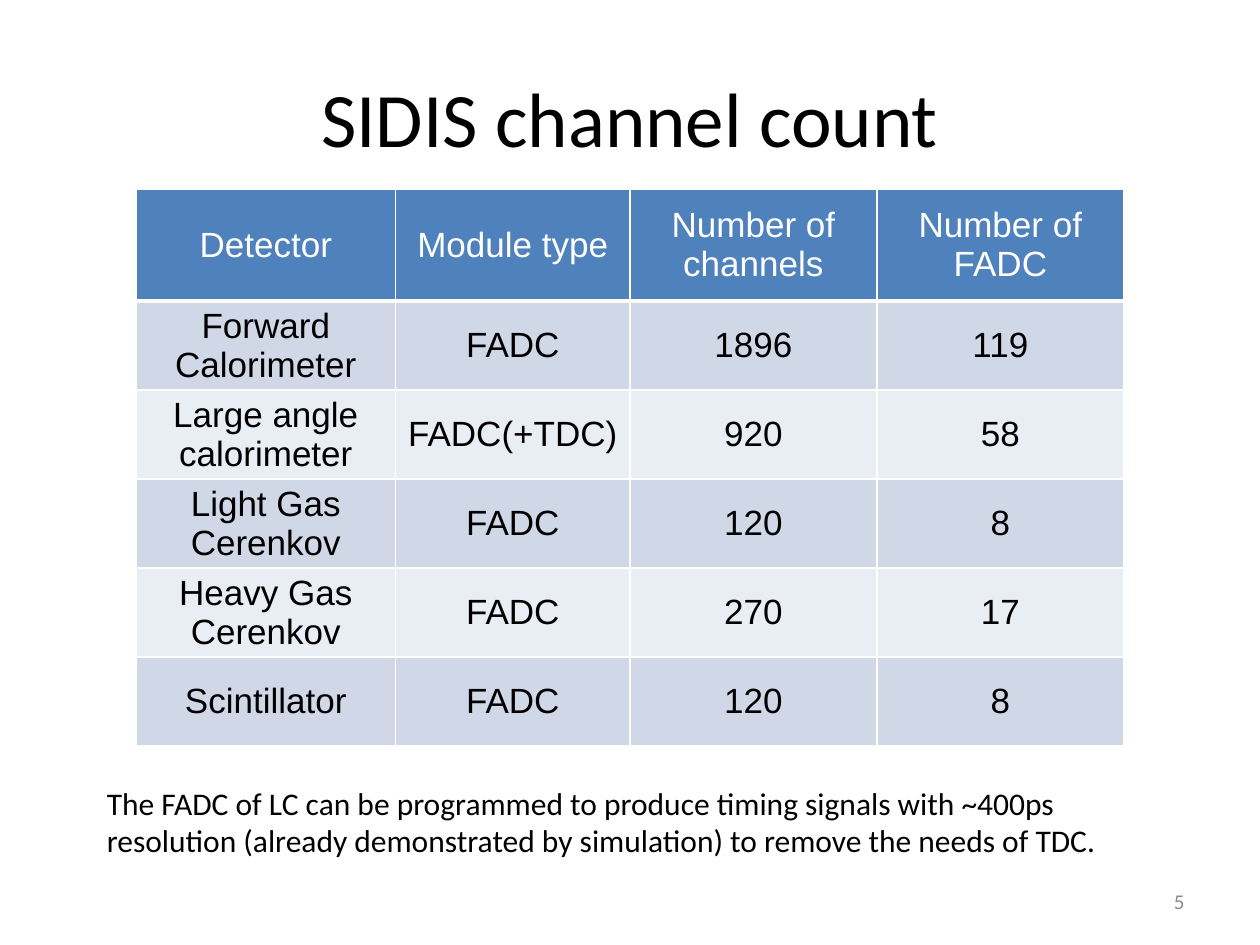
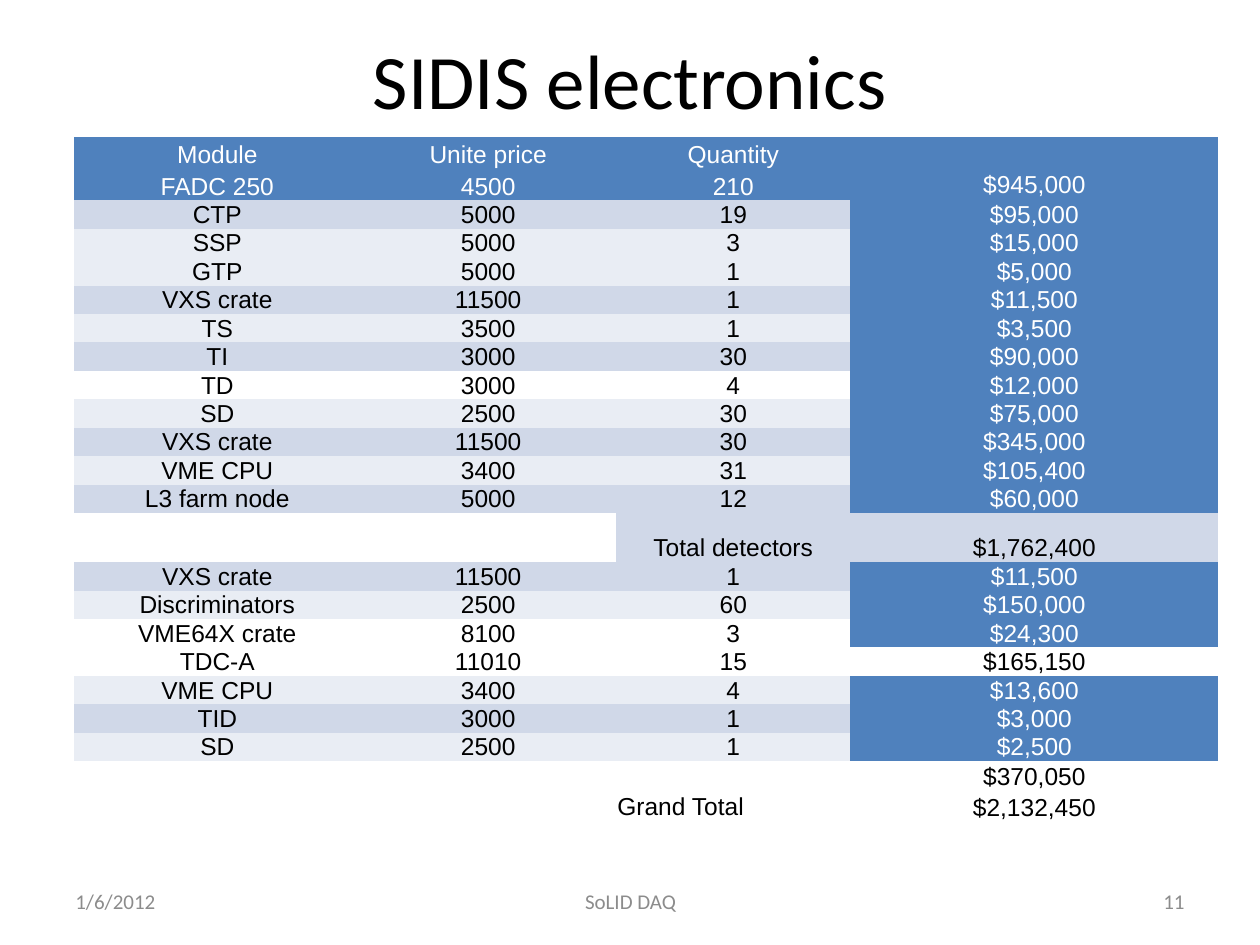
from dataclasses import dataclass

from lxml import etree
from pptx import Presentation
from pptx.dml.color import RGBColor
from pptx.enum.text import MSO_ANCHOR, PP_ALIGN
from pptx.oxml.ns import qn
from pptx.util import Inches, Pt

LEFT, CENTER, RIGHT = PP_ALIGN.LEFT, PP_ALIGN.CENTER, PP_ALIGN.RIGHT
MIDDLE, BOTTOM = MSO_ANCHOR.MIDDLE, MSO_ANCHOR.BOTTOM
TITLE_ONLY = 5
PLAIN_TABLE_STYLE = "{2D5ABB26-0587-4C30-8999-92F81FD0307C}"


@dataclass(frozen=True)
class Theme:
    black: str = "000000"
    white: str = "FFFFFF"
    gray: str = "8C8C8C"
    blue: str = "4F81BD"
    dark_band: str = "D0D8E8"
    light_band: str = "E9EDF4"
    text_font: str = "Calibri"
    table_font: str = "Arial"
    title_size: int = 44
    count_size: int = 20
    note_size: int = 18
    cost_size: int = 14
    cost_line: float = 16.2
    footer_size: int = 12


THEME = Theme()
DARK, LIGHT, CLEAR = THEME.dark_band, THEME.light_band, None

COUNT_HEADER = ("Detector", "Module type", "Number of channels", "Number of FADC")
DETECTORS = [
    ("Forward Calorimeter", "FADC", 1896, 119),
    ("Large angle calorimeter", "FADC(+TDC)", 920, 58),
    ("Light Gas Cerenkov", "FADC", 120, 8),
    ("Heavy Gas Cerenkov", "FADC", 270, 17),
    ("Scintillator", "FADC", 120, 8),
]
TIMING_NOTE = (
    "The FADC of LC can be programmed to produce timing signals with ~400ps "
    "resolution (already demonstrated by simulation) to remove the needs of TDC."
)

COST_HEADER = ("Module", "Unite price", "Quantity", "")
DETECTOR_MODULES = [
    ("FADC 250", 4500, 210, THEME.blue),
    ("CTP", 5000, 19, DARK),
    ("SSP", 5000, 3, LIGHT),
    ("GTP", 5000, 1, LIGHT),
    ("VXS crate", 11500, 1, DARK),
    ("TS", 3500, 1, LIGHT),
    ("TI", 3000, 30, DARK),
    ("TD", 3000, 4, CLEAR),
    ("SD", 2500, 30, LIGHT),
    ("VXS crate", 11500, 30, DARK),
    ("VME CPU", 3400, 31, LIGHT),
    ("L3 farm node", 5000, 12, DARK),
]
TIMING_MODULES = [
    ("VXS crate", 11500, 1, DARK),
    ("Discriminators", 2500, 60, LIGHT),
    ("VME64X crate", 8100, 3, CLEAR),
    ("TDC-A", 11010, 15, CLEAR),
    ("VME CPU", 3400, 4, LIGHT),
    ("TID", 3000, 1, DARK),
    ("SD", 2500, 1, LIGHT),
]
UNSHADED_COST = "TDC-A"


def format_text(paragraph, size, color, font=THEME.text_font, align=LEFT):
    paragraph.alignment = align
    paragraph.font.name = font
    paragraph.font.size = Pt(size)
    paragraph.font.bold = False
    paragraph.font.color.rgb = RGBColor.from_string(color)


def add_titled_slide(deck, title, top):
    slide = deck.slides.add_slide(deck.slide_layouts[TITLE_ONLY])
    heading = slide.shapes.title
    heading.left, heading.top = Inches(0.5), Inches(top)
    heading.width, heading.height = Inches(9), Inches(1.25)
    heading.text_frame.text = title
    heading.text_frame.vertical_anchor = MIDDLE
    format_text(heading.text_frame.paragraphs[0], THEME.title_size, THEME.black, align=CENTER)
    return slide


def add_text(slide, box, text, size, color, align=LEFT, anchor=None):
    frame = slide.shapes.add_textbox(*map(Inches, box)).text_frame
    frame.word_wrap = True
    frame.vertical_anchor = anchor
    frame.text = text
    format_text(frame.paragraphs[0], size, color, align=align)


def add_footer(slide, number, date="", topic=""):
    parts = [
        (0.5, 2.33, date, LEFT),
        (3.42, 3.17, topic, CENTER),
        (7.17, 2.33, number, RIGHT),
    ]
    for left, width, text, align in parts:
        if text:
            add_text(slide, (left, 6.95, width, 0.4), text,
                     THEME.footer_size, THEME.gray, align, MIDDLE)


def add_plain_table(slide, left, top, widths, heights):
    box = map(Inches, (left, top, sum(widths), sum(heights)))
    table = slide.shapes.add_table(len(heights), len(widths), *box).table
    table.first_row = table.horz_banding = False
    table._tbl.tblPr.find(qn("a:tableStyleId")).text = PLAIN_TABLE_STYLE
    for column, width in zip(table.columns, widths):
        column.width = Inches(width)
    for row, height in zip(table.rows, heights):
        row.height = Inches(height)
    return table


def fill_cell(cell, text, size, fill, anchor, align=CENTER):
    cell.margin_left = cell.margin_right = Inches(0.01)
    cell.margin_top = cell.margin_bottom = 0
    cell.vertical_anchor = anchor
    if fill:
        cell.fill.solid()
        cell.fill.fore_color.rgb = RGBColor.from_string(fill)
    else:
        cell.fill.background()
    cell.text = str(text)
    color = THEME.white if fill == THEME.blue else THEME.black
    format_text(cell.text_frame.paragraphs[0], size, color, THEME.table_font, align)


def add_borders(cell, widths):
    properties = cell._tc.get_or_add_tcPr()
    for index, (side, width) in enumerate(widths.items()):
        line = etree.Element(qn(f"a:{side}"), w=str(Pt(width)))
        solid = etree.SubElement(line, qn("a:solidFill"))
        etree.SubElement(solid, qn("a:srgbClr"), val=THEME.white)
        properties.insert(index, line)


def add_count_table(slide, left, top, height):
    rows = [COUNT_HEADER, *DETECTORS]
    header_height = 0.89
    row_height = (height - header_height) / len(DETECTORS)
    table = add_plain_table(slide, left, top, [2.06, 1.86, 1.96, 1.96],
                            [header_height] + [row_height] * len(DETECTORS))
    for r, row in enumerate(rows):
        fill = THEME.blue if r == 0 else (LIGHT, DARK)[r % 2]
        borders = {"lnL": 1, "lnR": 1, "lnT": 3 if r == 1 else 1, "lnB": 3 if r == 0 else 1}
        for c, text in enumerate(row):
            cell = table.cell(r, c)
            fill_cell(cell, text, THEME.count_size, fill, MIDDLE)
            add_borders(cell, borders)


def dollars(amount):
    return f"${amount:,}"


def subtotal(modules):
    return sum(price * quantity for _, price, quantity, _ in modules)


def module_rows(modules):
    for name, price, quantity, band in modules:
        cost_fill = CLEAR if name == UNSHADED_COST else THEME.blue
        yield (name, price, quantity, dollars(price * quantity)), [band] * 3 + [cost_fill]


def cost_rows():
    detectors, timing = subtotal(DETECTOR_MODULES), subtotal(TIMING_MODULES)
    return [
        (COST_HEADER, [THEME.blue] * 4),
        *module_rows(DETECTOR_MODULES),
        (("", "", "Total detectors", dollars(detectors)), [CLEAR, CLEAR, DARK, DARK]),
        *module_rows(TIMING_MODULES),
        (("", "", "", dollars(timing)), [CLEAR] * 4),
        (("", "", "Grand Total", dollars(detectors + timing)), [CLEAR] * 4),
    ]


def add_cost_table(slide, left, top):
    rows = cost_rows()
    heights = [0.22] * len(rows)
    heights[0] = heights[1] = heights[-1] = 0.25
    heights[len(DETECTOR_MODULES) + 1] = 0.39
    table = add_plain_table(slide, left, top, [2.27, 2.03, 1.86, 2.92], heights)
    for r, (texts, fills) in enumerate(rows):
        for c, (text, fill) in enumerate(zip(texts, fills)):
            cell = table.cell(r, c)
            grand_label = text == "Grand Total"
            blue_cost = c == 3 and fill == THEME.blue
            fill_cell(cell, text, THEME.cost_size, fill,
                      MIDDLE if blue_cost or grand_label else BOTTOM,
                      LEFT if grand_label else CENTER)
            cell.text_frame.paragraphs[0].line_spacing = Pt(THEME.cost_line)


def build_channel_count(deck):
    slide = add_titled_slide(deck, "SIDIS channel count", 0.3)
    add_count_table(slide, 1.08, 1.5, 4.42)
    add_footer(slide, "5")
    add_text(slide, (0.75, 6.17, 8.67, 0.71), TIMING_NOTE, THEME.note_size, THEME.black)


def build_electronics(deck):
    slide = add_titled_slide(deck, "SIDIS electronics", 0)
    add_footer(slide, "11", "1/6/2012", "SoLID DAQ")
    add_cost_table(slide, 0.59, 1.09)


def main():
    deck = Presentation()
    deck.slide_width, deck.slide_height = Inches(10), Inches(7.5)
    build_channel_count(deck)
    build_electronics(deck)
    deck.save("out.pptx")


if __name__ == "__main__":
    main()
